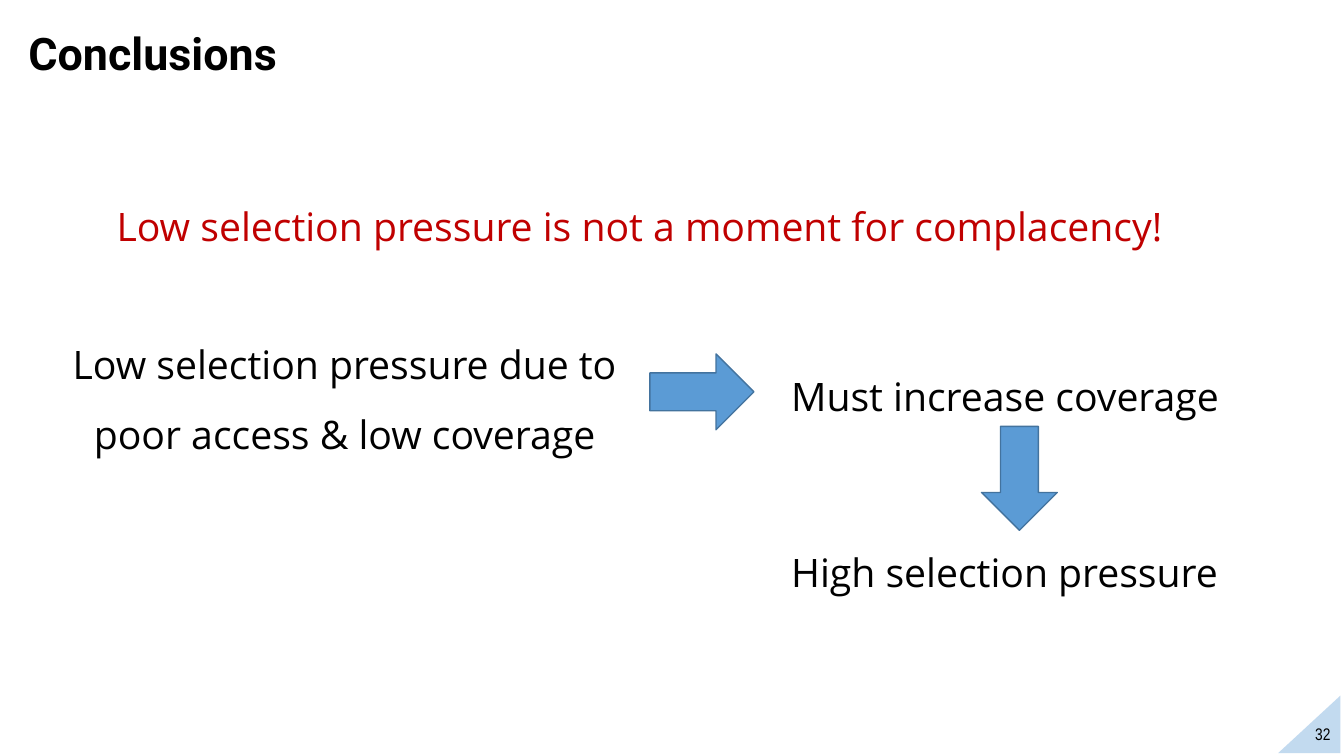
from pptx import Presentation
from pptx.dml.color import RGBColor
from pptx.enum.shapes import MSO_SHAPE as Shape
from pptx.enum.text import MSO_ANCHOR as Anchor, MSO_AUTO_SIZE as AutoSize, PP_ALIGN as Align
from pptx.oxml.ns import qn
from pptx.util import Cm, Pt
from lxml.etree import SubElement

COLOURS = {"black": "000000", "red": "C00000", "blue": "5B9BD5", "outline": "43739E"}


def colour(name):
    """Return the named colour."""
    return RGBColor.from_string(COLOURS[name])


def style_font(font, name, size, colour_name="black", bold=False):
    """Set the face, size, colour and weight of a font."""
    font.name, font.size, font.bold = name, Pt(size), bold
    font.color.rgb = colour(colour_name)


def add_title(slide, text):
    """Fill and place the title placeholder."""
    title = slide.shapes.title
    title.left, title.top, title.width, title.height = Cm(0.46), Cm(0), Cm(29.21), Cm(2.82)
    frame = title.text_frame
    frame.text = text
    frame.vertical_anchor = Anchor.MIDDLE
    paragraph = frame.paragraphs[0]
    paragraph.alignment, paragraph.line_spacing = Align.LEFT, 0.9
    style_font(paragraph.font, "Roboto", 32, bold=True)


def add_text(slide, text, left, top, width, height, align=Align.LEFT):
    """Add a wrapped one-paragraph text box and return its frame."""
    box = slide.shapes.add_textbox(Cm(left), Cm(top), Cm(width), Cm(height))
    frame = box.text_frame
    frame.word_wrap = True
    frame.text = text
    frame.paragraphs[0].alignment = align
    return frame


def add_statement(slide, text, left, top, width, height, align=Align.LEFT, colour_name="black"):
    """Add one statement of the argument."""
    frame = add_text(slide, text, left, top, width, height, align)
    frame.auto_size = AutoSize.SHAPE_TO_FIT_TEXT
    paragraph = frame.paragraphs[0]
    paragraph.line_spacing = 1.5
    style_font(paragraph.font, "Open Sans", 28, colour_name)


def add_blue_shape(slide, kind, left, top, width, height):
    """Add a blue preset shape without shadow."""
    shape = slide.shapes.add_shape(kind, Cm(left), Cm(top), Cm(width), Cm(height))
    shape.shadow.inherit = False
    shape.fill.solid()
    shape.fill.fore_color.rgb = colour("blue")
    return shape


def add_arrow(slide, left, top, rotation=0):
    """Add a block arrow that points right before rotation."""
    arrow = add_blue_shape(slide, Shape.RIGHT_ARROW, left, top, 2.62, 1.91)
    arrow.rotation = rotation
    arrow.line.color.rgb = colour("outline")
    arrow.line.width = Pt(1)


def add_page_corner(slide, number):
    """Add the pale corner triangle and the page number."""
    corner = add_blue_shape(slide, Shape.RIGHT_TRIANGLE, 32.21, 17.53, 1.57, 1.45)
    corner.line.fill.background()
    properties = corner.element.spPr
    properties.find(qn("a:xfrm")).set("flipH", "1")
    fill_colour = properties.find(qn("a:solidFill")).find(qn("a:srgbClr"))
    SubElement(fill_colour, qn("a:alpha"), val="37000")
    frame = add_text(slide, number, 26.16, 17.98, 7.62, 1.02, Align.RIGHT)
    frame.vertical_anchor = Anchor.MIDDLE
    style_font(frame.paragraphs[0].font, "Arial Narrow", 12)


def main():
    """Build the conclusions slide."""
    presentation = Presentation()
    presentation.slide_width, presentation.slide_height = Cm(33.87), Cm(19.05)
    slide = presentation.slides.add_slide(presentation.slide_layouts[5])
    add_page_corner(slide, "32")
    add_title(slide, "Conclusions")
    add_statement(slide, "Low selection pressure is not a moment for complacency!",
                  2.69, 4.37, 29.31, 2.06, colour_name="red")
    add_statement(slide, "Low selection pressure due to poor access & low coverage",
                  0.66, 7.85, 16.05, 3.66, Align.CENTER)
    add_statement(slide, "Must increase coverage", 19.69, 8.66, 12.01, 1.85)
    add_statement(slide, "High selection pressure", 19.69, 13.11, 12.01, 2.06)
    add_arrow(slide, 16.38, 8.92)
    add_arrow(slide, 24.38, 11.1, rotation=90)
    presentation.save("out.pptx")


if __name__ == "__main__":
    main()
